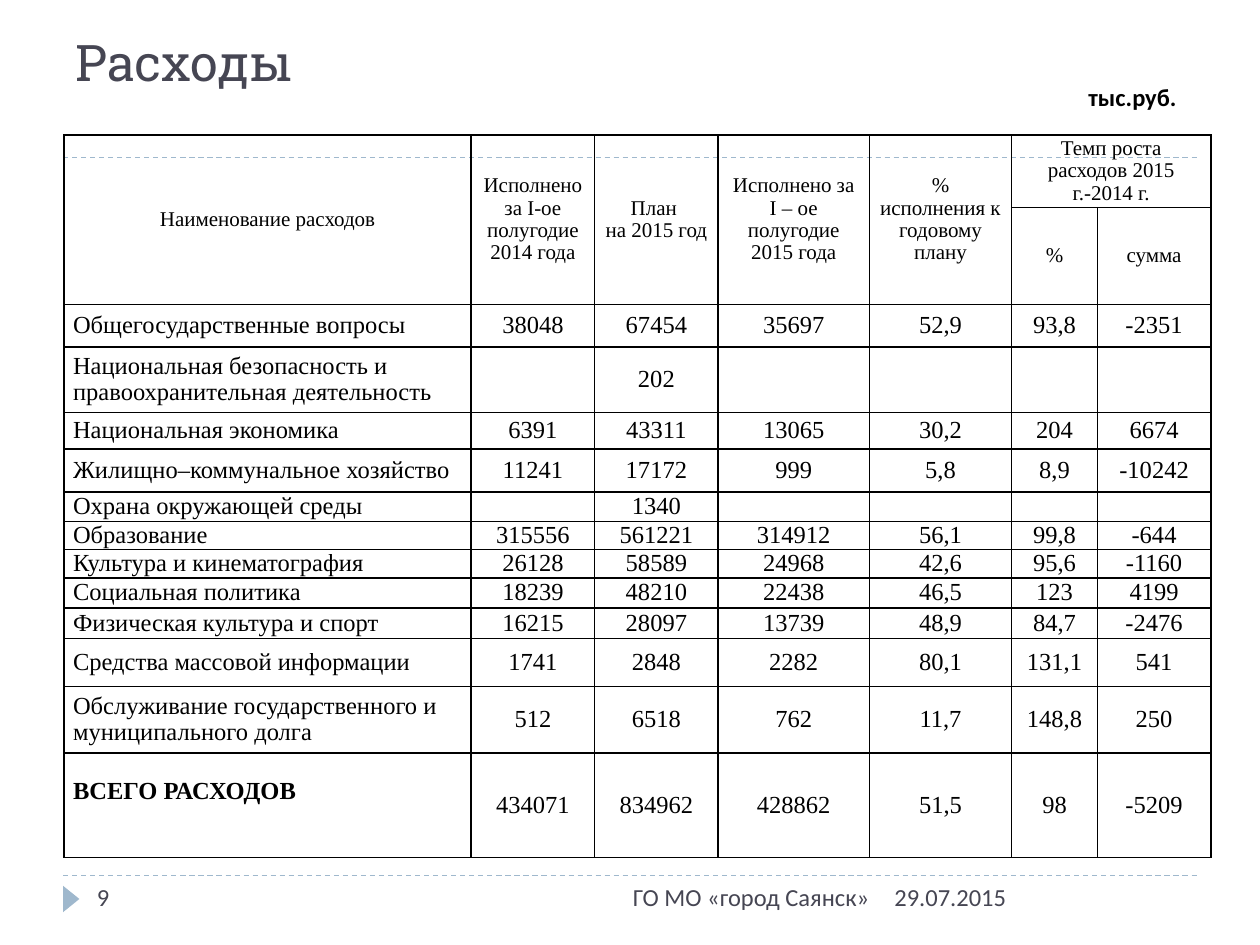
from dataclasses import dataclass

from lxml.etree import SubElement
from pptx import Presentation
from pptx.dml.color import RGBColor
from pptx.enum.dml import MSO_LINE
from pptx.enum.shapes import MSO_CONNECTOR, MSO_SHAPE
from pptx.enum.text import MSO_ANCHOR as ANCHOR, PP_ALIGN as ALIGN
from pptx.oxml.ns import qn
from pptx.util import Inches, Pt


@dataclass(frozen=True)
class Theme:
    """Colours, fonts and type sizes of the slide."""
    ink: RGBColor = RGBColor(0, 0, 0)
    muted: RGBColor = RGBColor(0x46, 0x46, 0x53)
    accent: RGBColor = RGBColor(0x9F, 0xB8, 0xCD)
    title_font: str = "Roboto Slab"
    text_font: str = "Calibri"
    table_font: str = "Times New Roman"
    title: float = 28.8
    body: float = 14
    header: float = 12


THEME = Theme()
COLUMNS = [3.23, 0.98, 0.98, 1.2, 1.13, 0.68, 0.9]
ROW_HEIGHTS = [0.55, 0.74, 0.34, 0.52, 0.29, 0.34, 0.21, 0.21, 0.21,
               0.24, 0.24, 0.38, 0.53, 0.83]
HEADER = [
    ["Наименование расходов", "Исполнено за I-ое полугодие 2014 года",
     "План \nна 2015 год ", "Исполнено за I – ое полугодие 2015 года",
     "% исполнения к годовому плану", "Темп роста расходов 2015 г.-2014 г.", ""],
    ["", "", "", "", "", "%", "сумма"],
]
EXPENSES = [
    ["Общегосударственные вопросы", "38048", "67454", "35697", "52,9", "93,8", "-2351"],
    ["Национальная безопасность и правоохранительная деятельность",
     "", "202", "", "", "", ""],
    ["Национальная экономика", "6391", "43311", "13065", "30,2", "204", "6674"],
    ["Жилищно–коммунальное хозяйство", "11241", "17172", "999", "5,8", "8,9", "-10242"],
    ["Охрана окружающей среды", "", "1340", "", "", "", ""],
    ["Образование", "315556", "561221", "314912", "56,1", "99,8", "-644"],
    ["Культура и кинематография", "26128", "58589", "24968", "42,6", "95,6", "-1160"],
    ["Социальная политика", "18239", "48210", "22438", "46,5", "123", "4199"],
    ["Физическая культура и спорт", "16215", "28097", "13739", "48,9", "84,7", "-2476"],
    ["Средства массовой информации", "1741", "2848", "2282", "80,1", "131,1", "541"],
    ["Обслуживание государственного и муниципального долга",
     "512", "6518", "762", "11,7", "148,8", "250"],
    ["ВСЕГО РАСХОДОВ", "434071", "834962", "428862", "51,5", "98", "-5209"],
]


def set_attrs(obj, values):
    """Set each attribute of obj from a dict of values."""
    for name, value in values.items():
        setattr(obj, name, value)


def add_text(s, box, text, font, size, color, bold=False, align=ALIGN.LEFT,
             anchor=ANCHOR.TOP):
    """Place one line of text in box."""
    tf = s.shapes.add_textbox(*map(Inches, box)).text_frame
    set_attrs(tf, {"word_wrap": True, "vertical_anchor": anchor})
    p = tf.paragraphs[0]
    p.alignment = align
    r = p.add_run()
    r.text = text
    set_attrs(r.font, {"name": font, "size": Pt(size), "bold": bold})
    r.font.color.rgb = color


def add_rule(s, left, top, width):
    """Draw a dashed horizontal rule."""
    line = s.shapes.add_connector(MSO_CONNECTOR.STRAIGHT, Inches(left), Inches(top),
                                  Inches(left + width), Inches(top))
    set_attrs(line.line, {"width": Pt(0.75), "dash_style": MSO_LINE.DASH})
    line.line.color.rgb = THEME.accent
    SubElement(line._element.spPr, qn("a:effectLst"))


def add_heading(s, box):
    """Place the title, the unit label and the rule beneath them."""
    left, top, width, height = box
    add_text(s, (left, top, width, height), "Расходы", THEME.title_font,
             THEME.title, THEME.muted, anchor=ANCHOR.BOTTOM)
    add_text(s, (left + 8.04, top + 0.43, 1.02, 0.34), "тыс.руб.",
             THEME.text_font, THEME.body, THEME.ink, bold=True)
    add_rule(s, left, top + 1.08, width)


def add_footer(s, box):
    """Place the rule, marker, slide number, organisation and date."""
    left, top, width, height = box
    add_rule(s, left, top, width)
    sp = s.shapes.add_shape(MSO_SHAPE.ISOSCELES_TRIANGLE, Inches(left - 0.04),
                            Inches(top + 0.12), Inches(0.21), Inches(0.13))
    sp.rotation = 90
    sp.shadow.inherit = False
    sp.fill.solid()
    sp.fill.fore_color.rgb = THEME.accent
    sp.line.fill.background()
    for x, w, text, align in [(0.17, 2.17, "9", ALIGN.LEFT),
                              (2.67, 3.83, "ГО МО «город Саянск»", ALIGN.RIGHT),
                              (6.5, 2.5, "29.07.2015", ALIGN.LEFT)]:
        add_text(s, (left + x, top, w, height), text, THEME.text_font,
                 THEME.body, THEME.muted, align=align)


def set_borders(cell):
    """Give a cell solid black borders on its four sides."""
    tc_pr = cell._tc.get_or_add_tcPr()
    for index, side in enumerate(("lnL", "lnR", "lnT", "lnB")):
        ln = tc_pr.makeelement(qn(f"a:{side}"), {"w": str(Pt(1))})
        fill = SubElement(ln, qn("a:solidFill"))
        SubElement(fill, qn("a:srgbClr"), val=str(THEME.ink))
        tc_pr.insert(index, ln)


def fill_cell(cell, text, size, align, bold):
    """Write and format one table cell."""
    set_attrs(cell, {"vertical_anchor": ANCHOR.MIDDLE, "margin_left": Inches(0.07),
                     "margin_right": Inches(0.07), "margin_top": 0,
                     "margin_bottom": Inches(0.21) if bold else 0})
    cell.fill.background()
    set_borders(cell)
    cell.text_frame.text = text
    for p in cell.text_frame.paragraphs:
        set_attrs(p, {"alignment": align, "line_spacing": 0.96})
        for r in p.runs:
            set_attrs(r.font, {"name": THEME.table_font, "size": Pt(size), "bold": bold})
            r.font.color.rgb = THEME.ink
        if not p.runs:
            SubElement(p._p, qn("a:endParaRPr"), sz=str(size * 100))


def add_expense_table(s, box):
    """Place the expense table with its two-row header."""
    rows = HEADER + EXPENSES
    table = s.shapes.add_table(len(rows), len(COLUMNS), *map(Inches, box)).table
    set_attrs(table, {"first_row": False, "horz_banding": False})
    for column, width in zip(table.columns, COLUMNS):
        column.width = Inches(width)
    for row, height in zip(table.rows, ROW_HEIGHTS):
        row.height = Inches(height)
    for i, values in enumerate(rows):
        is_header = i < len(HEADER)
        for j, text in enumerate(values):
            align = ALIGN.CENTER if is_header or j else ALIGN.LEFT
            fill_cell(table.cell(i, j), text, THEME.header if is_header else THEME.body,
                      align, bold=j == 0 and i == len(rows) - 1)
    for j in range(5):
        table.cell(0, j).merge(table.cell(1, j))
    table.cell(0, 5).merge(table.cell(0, 6))


def main():
    """Build and save the slide."""
    prs = Presentation()
    set_attrs(prs, {"slide_width": Inches(10), "slide_height": Inches(7.5)})
    s = prs.slides.add_slide(prs.slide_layouts[6])
    add_heading(s, (0.5, 0.17, 9, 0.61))
    add_footer(s, (0.5, 6.95, 9, 0.4))
    add_expense_table(s, (0.51, 1.07, sum(COLUMNS), sum(ROW_HEIGHTS)))
    prs.save("out.pptx")


if __name__ == "__main__":
    main()
